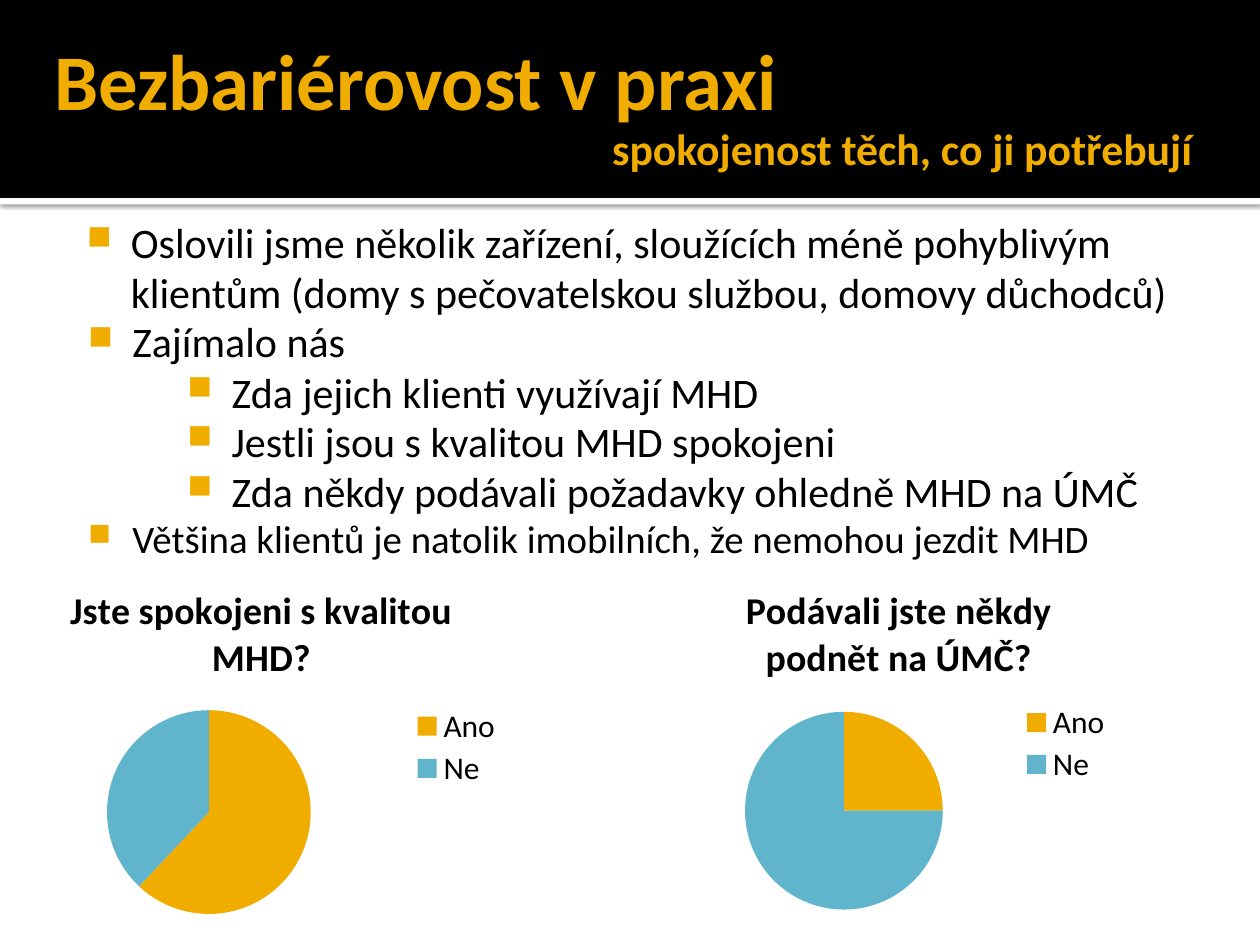
"""Build a slide on accessible transport with a heading, bullets and two pie charts."""
import lxml.etree
import pptx
import pptx.chart.data
import pptx.dml.color
import pptx.enum.chart
import pptx.enum.shapes
import pptx.enum.text
import pptx.oxml.ns
import pptx.util
from pptx.util import Cm

FONT = "Calibri"
COLORS = {"amber": "F0AD00", "blue": "60B5CC", "black": "000000", "white": "FFFFFF"}
HEADING_INSETS = (0.25, 0.13, 0.13, 0.13)
BULLET_INSETS = (0.15, 0.25, 0.25, 0.13)
BULLETS = [
    ("Oslovili jsme několik zařízení, sloužících méně pohyblivým klientům "
     "(domy s pečovatelskou službou, domovy důchodců)", (1.27, 4.11, 22.86, 2.59), 24),
    ("Zajímalo nás", (1.3, 6.12, 6.6, 1.4), 24),
    ("Zda jejich klienti využívají MHD", (3.3, 7.13, 20.6, 1.4), 24),
    ("Jestli jsou s kvalitou MHD spokojeni", (3.3, 8.13, 20.6, 1.4), 24),
    ("Zda někdy podávali požadavky ohledně MHD na ÚMČ", (3.3, 9.13, 20.6, 2.21), 24),
    ("Většina klientů je natolik imobilních, že nemohou jezdit MHD",
     (1.3, 10.13, 22.35, 1.4), 22.2),
]


def color(name):
    """Return the named colour."""
    return pptx.dml.color.RGBColor.from_string(COLORS[name])


def add_node(parent, tag, **attributes):
    """Append an XML element with the given attributes."""
    values = {key: str(value) for key, value in attributes.items()}
    return lxml.etree.SubElement(parent, pptx.oxml.ns.qn(tag), values)


def style_font(font, size, shade="black", bold=False):
    """Set the face, size, colour and weight of a font."""
    font.name, font.size, font.bold = FONT, pptx.util.Pt(size), bold
    font.color.rgb = color(shade)


def add_band(page, top, height, shade):
    """Add a full-width band without outline or shadow."""
    band = page.shapes.add_shape(pptx.enum.shapes.MSO_SHAPE.RECTANGLE,
                                 0, Cm(top), Cm(25.4), Cm(height))
    band.fill.solid()
    band.fill.fore_color.rgb = color(shade)
    band.line.fill.background()
    band.shadow.inherit = False
    return band


def add_soft_shadow(band):
    """Cast a soft shadow below a band."""
    effects = band.element.spPr.find(pptx.oxml.ns.qn("a:effectLst"))
    shadow = add_node(effects, "a:outerShdw", blurRad=pptx.util.Pt(2.5),
                      dist=pptx.util.Pt(0.8), dir=5400000, algn="t", rotWithShape=0)
    shade = add_node(shadow, "a:srgbClr", val=COLORS["black"])
    add_node(shade, "a:alpha", val=60000)


def add_text(page, text, place, insets, size):
    """Add a wrapped text box with one paragraph and return its paragraph."""
    frame = page.shapes.add_textbox(*map(Cm, place)).text_frame
    frame.word_wrap = True
    (frame.margin_left, frame.margin_top,
     frame.margin_right, frame.margin_bottom) = map(Cm, insets)
    para = frame.paragraphs[0]
    para.text = text
    style_font(para.font, size)
    return frame, para


def add_heading(page, text, place, size):
    """Add a bold, vertically centred heading."""
    frame, para = add_text(page, text, place, HEADING_INSETS, size)
    frame.vertical_anchor = pptx.enum.text.MSO_ANCHOR.MIDDLE
    style_font(para.font, size, "amber", True)


def add_bullet(page, text, place, size):
    """Add a line of text with a square bullet."""
    para = add_text(page, text, place, BULLET_INSETS, size)[1]
    properties = para._p.get_or_add_pPr()
    properties.set("marL", str(Cm(1.22)))
    properties.set("indent", str(-Cm(0.89)))
    bullet_color = lxml.etree.Element(pptx.oxml.ns.qn("a:buClr"))
    add_node(bullet_color, "a:srgbClr", val=COLORS["amber"])
    bullet_size = lxml.etree.Element(pptx.oxml.ns.qn("a:buSzPct"), val="80000")
    bullet_sign = lxml.etree.Element(pptx.oxml.ns.qn("a:buChar"), char="■")
    for position, node in enumerate((bullet_color, bullet_size, bullet_sign)):
        properties.insert(position, node)


def set_layout(element, before, **shares):
    """Place a chart part by shares of the chart area."""
    for old in element.findall(pptx.oxml.ns.qn("c:layout")):
        element.remove(old)
    layout = lxml.etree.Element(pptx.oxml.ns.qn("c:layout"))
    manual = add_node(layout, "c:manualLayout")
    if before is None:
        element.insert(0, layout)
        add_node(manual, "c:layoutTarget", val="inner")
    else:
        element.find(pptx.oxml.ns.qn(before)).addnext(layout)
    for mode in ("xMode", "yMode"):
        add_node(manual, f"c:{mode}", val="edge")
    for key, share in shares.items():
        add_node(manual, f"c:{key}", val=share)


def add_pie(page, question, values, place, pie, legend):
    """Add a pie chart of yes and no answers to a question."""
    data = pptx.chart.data.CategoryChartData()
    data.categories = ["Ano", "Ne"]
    data.add_series(question, values)
    chart = page.shapes.add_chart(pptx.enum.chart.XL_CHART_TYPE.PIE,
                                  *map(Cm, place), data).chart
    style_font(chart.font, 18)
    chart.has_title = True
    title = chart.chart_title
    title.include_in_layout = False
    title.text_frame.text = question
    style_font(title.text_frame.paragraphs[0].font, 21.6, bold=True)
    chart.has_legend = True
    chart.legend.position = pptx.enum.chart.XL_LEGEND_POSITION.RIGHT
    chart.legend.include_in_layout = False
    plot = chart.plots[0]
    plot.vary_by_categories = True
    for index, shade in enumerate(("amber", "blue")):
        fill = plot.series[0].points[index].format.fill
        fill.solid()
        fill.fore_color.rgb = color(shade)
    area = chart.element.find(".//" + pptx.oxml.ns.qn("c:plotArea"))
    set_layout(area, None, **dict(zip("xywh", pie)))
    set_layout(chart.legend._element, "c:legendPos", **dict(zip("xywh", legend)))


def main():
    """Build and save the deck."""
    deck = pptx.Presentation()
    deck.slide_width, deck.slide_height = Cm(25.4), Cm(19.05)
    page = deck.slides.add_slide(deck.slide_layouts[6])
    add_soft_shadow(add_band(page, 3.99, 0.13, "white"))
    add_band(page, 0, 3.99, "black")
    add_heading(page, "Bezbariérovost v praxi", (0.84, -0.15, 22.86, 3.48), 45)
    add_heading(page, "spokojenost těch, co ji potřebují", (12.09, 1.24, 13.41, 3.48), 25)
    for text, place, size in BULLETS:
        add_bullet(page, text, place, size)
    add_pie(page, "Jste spokojeni s kvalitou MHD?", (62, 38), (0.23, 11.33, 10.08, 7.47),
            (0.19, 0.4, 0.41, 0.55), (0.79, 0.38, 0.2, 0.24))
    add_pie(page, "Podávali jste někdy podnět na ÚMČ?", (25, 75), (13.69, 11.33, 8.86, 7.32),
            (0.15, 0.41, 0.45, 0.55), (0.77, 0.38, 0.22, 0.24))
    deck.save("out.pptx")


if __name__ == "__main__":
    main()
